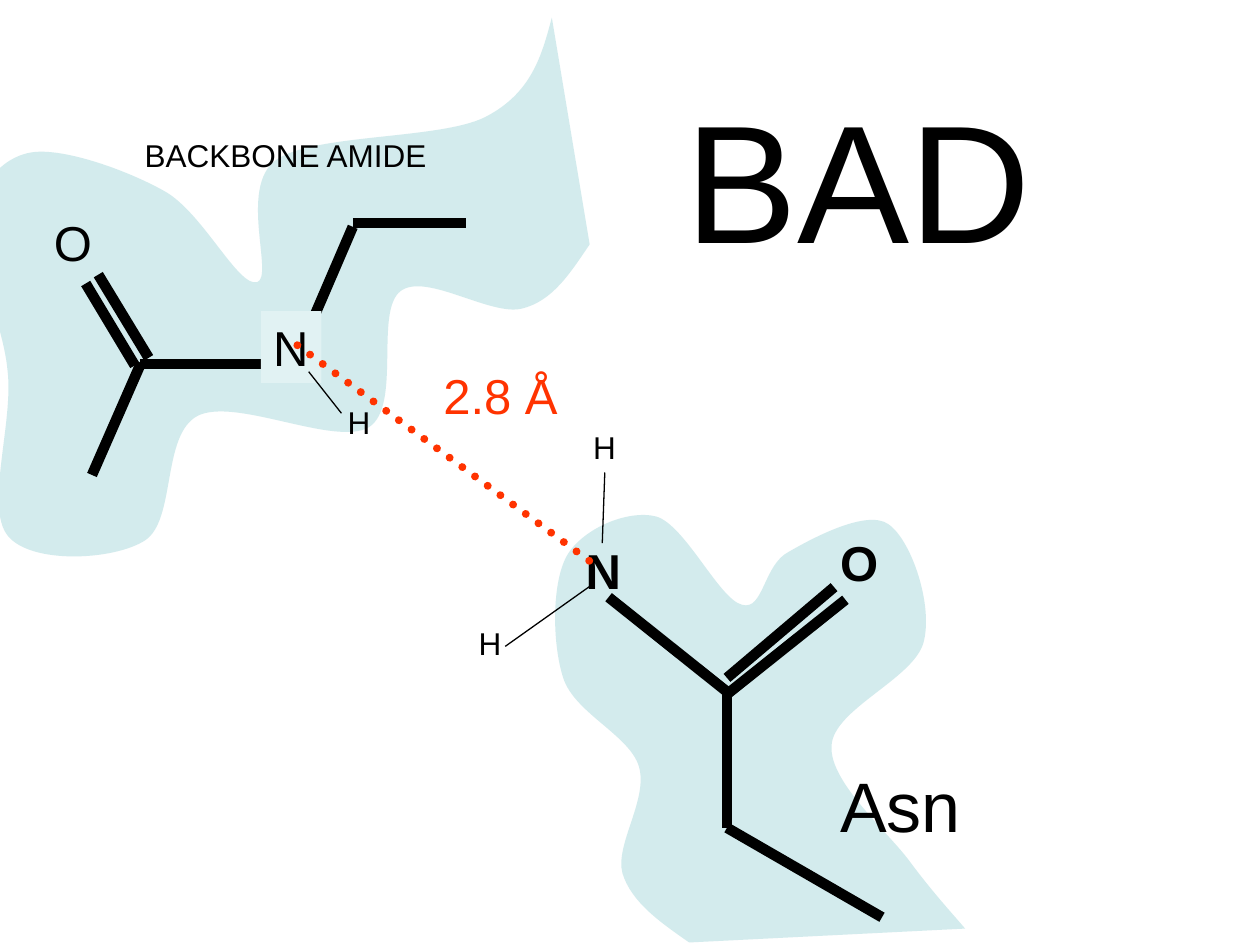
from pptx import Presentation
from pptx.dml.color import RGBColor
from pptx.enum.dml import MSO_LINE
from pptx.enum.shapes import MSO_CONNECTOR, MSO_SHAPE
from pptx.enum.text import MSO_ANCHOR, MSO_AUTO_SIZE, PP_ALIGN
from pptx.oxml.ns import qn
from pptx.util import Cm, Pt
from lxml import etree

STRAIGHT = MSO_CONNECTOR.STRAIGHT
RECTANGLE = MSO_SHAPE.RECTANGLE
ROUND_DOT = MSO_LINE.ROUND_DOT
FIT_SHAPE = MSO_AUTO_SIZE.SHAPE_TO_FIT_TEXT
TOP = MSO_ANCHOR.TOP
LEFT = PP_ALIGN.LEFT
BLACK = RGBColor(0x00, 0x00, 0x00)
RED = RGBColor(0xFF, 0x33, 0x00)
SURFACE = RGBColor(0xC9, 0xE7, 0xE9)
PALE = RGBColor(0xE1, 0xF2, 0xF3)
CM_PER_INCH = 2.54
BOND, THIN, DOTTED = 6, 0.75, 4.5
HYDROGEN_SIZE = (0.38, 0.4)
ATOM_SIZE = (0.48, 0.57)
OXYGEN_SIZE = (0.5, 0.57)

AMIDE_SURFACE = [
    (4.68, 1.94), (4.53, 2.16), (4.39, 2.39), (4.14, 2.45),
    (3.89, 2.51), (3.38, 2.16), (3.18, 2.31), (2.97, 2.47), (3.19, 3.22), (2.93, 3.39),
    (2.66, 3.55), (1.87, 3.15), (1.57, 3.3), (1.28, 3.45), (1.4, 4.13), (1.15, 4.29),
    (0.9, 4.45), (0.24, 4.48), (0.06, 4.25), (-0.12, 4.02), (0.11, 3.35), (0.06, 2.94),
    (0.02, 2.52), (-0.24, 2.06), (-0.21, 1.77), (-0.18, 1.49), (0, 1.25), (0.25, 1.21),
    (0.5, 1.17), (1.01, 1.35), (1.31, 1.52), (1.61, 1.69), (1.89, 2.28), (2.04, 2.24),
    (2.18, 2.2), (1.89, 1.49), (2.19, 1.27), (2.49, 1.06), (3.49, 1.11), (3.85, 0.93),
    (4.22, 0.74), (4.3, 0.44), (4.38, 0.14)]
AMIDE_BONDS = [
    ((1.11, 2.89), (2.34, 2.89)), ((2.34, 2.87), (2.8, 1.8)), ((1.12, 2.88), (0.73, 3.77)),
    ((1.07, 2.9), (0.68, 2.25)), ((1.18, 2.84), (0.78, 2.18)), ((2.8, 1.77), (3.7, 1.77))]
ASN_SURFACE = [
    (1.47, 4.48), (1.24, 4.32), (1.01, 4.16), (0.94, 3.93),
    (0.88, 3.7), (1.15, 3.34), (1.07, 3.08), (0.99, 2.83), (0.56, 2.66), (0.47, 2.38),
    (0.38, 2.1), (0.38, 1.62), (0.5, 1.41), (0.62, 1.2), (0.98, 1.04), (1.21, 1.1),
    (1.44, 1.17), (1.71, 1.76), (1.89, 1.8), (2.06, 1.85), (2.06, 1.48), (2.26, 1.38),
    (2.45, 1.27), (2.88, 1.04), (3.05, 1.16), (3.23, 1.28), (3.41, 1.8), (3.33, 2.1),
    (3.25, 2.39), (2.61, 2.63), (2.6, 2.92), (2.58, 3.21), (3.06, 3.61), (3.23, 3.85),
    (3.41, 4.09), (3.54, 4.23), (3.66, 4.37)]
ASN_BONDS = [
    ((0.83, 1.74), (1.77, 2.49)), ((2.71, 1.76), (1.77, 2.51)), ((1.77, 2.49), (1.77, 3.57)),
    ((2.62, 1.66), (1.77, 2.38)), ((1.77, 3.57), (3, 4.28))]


def spot(origin, point):
    """Turn a point in inches, relative to an origin, into slide lengths."""
    return [Cm((start + offset) * CM_PER_INCH) for start, offset in zip(origin, point)]


def add_surface(page, origin, points):
    """Draw a translucent outline of cubic curves through triples of points."""
    start, *rest = [spot(origin, point) for point in points]
    builder = page.shapes.build_freeform(*start, scale=1.0)
    builder.add_line_segments(rest, close=False)
    shape = builder.convert_to_shape()
    outline = shape._element.find(".//" + qn("a:path"))
    segments = outline.findall(qn("a:lnTo"))
    for first in range(0, len(segments), 3):
        curve = etree.SubElement(outline, qn("a:cubicBezTo"))
        for segment in segments[first:first + 3]:
            curve.append(segment[0])
            outline.remove(segment)
    shape.shadow.inherit = False
    shape.fill.solid()
    shape.fill.fore_color.rgb = SURFACE
    colour = shape._element.spPr.find(".//" + qn("a:srgbClr"))
    etree.SubElement(colour, qn("a:alpha")).set("val", "80000")
    shape.line.fill.background()


def add_bond(page, origin, begin, end, width=BOND, colour=BLACK):
    """Draw one straight line between two points."""
    bond = page.shapes.add_connector(STRAIGHT, *spot(origin, begin), *spot(origin, end))
    bond.line.width = Pt(width)
    bond.line.color.rgb = colour
    etree.SubElement(bond._element.spPr, qn("a:effectLst"))
    return bond


def set_text(box, text, points, colour=BLACK, bold=False):
    """Fill a box with one unwrapped, left-aligned line of text."""
    frame = box.text_frame
    frame.text = text
    frame.word_wrap = False
    frame.auto_size = FIT_SHAPE
    frame.vertical_anchor = TOP
    para = frame.paragraphs[0]
    para.alignment = LEFT
    para.font.name = "Arial"
    para.font.size = Pt(points)
    para.font.bold = bold
    para.font.color.rgb = colour


def add_label(page, origin, point, size, text, points, **style):
    """Add a text box at a point and return it."""
    box = page.shapes.add_textbox(*spot(origin, point), *spot((0, 0), size))
    set_text(box, text, points, **style)
    return box


def add_amide(page, origin):
    """Draw the backbone amide with its surface and labels."""
    add_surface(page, origin, AMIDE_SURFACE)
    for begin, end in AMIDE_BONDS:
        add_bond(page, origin, begin, end)
    add_label(page, origin, (0.33, 1.64), OXYGEN_SIZE, "O", 28)
    nitrogen = page.shapes.add_shape(
        RECTANGLE, *spot(origin, (2.07, 2.47)), *spot((0, 0), ATOM_SIZE))
    nitrogen.shadow.inherit = False
    nitrogen.fill.solid()
    nitrogen.fill.fore_color.rgb = PALE
    nitrogen.line.fill.background()
    set_text(nitrogen, "N", 28)
    add_bond(page, origin, (2.45, 2.95), (2.71, 3.28), THIN)
    add_label(page, origin, (2.66, 3.15), HYDROGEN_SIZE, "H", 18)
    add_label(page, origin, (1.05, 1.03), (2.45, 0.4), "BACKBONE AMIDE", 18)


def add_asparagine(page, origin):
    """Draw the Asn side chain with its surface and labels."""
    add_surface(page, origin, ASN_SURFACE)
    for begin, end in ASN_BONDS:
        add_bond(page, origin, begin, end)
    add_label(page, origin, (0.55, 1.24), ATOM_SIZE, "N", 28, bold=True)
    add_label(page, origin, (2.57, 1.18), OXYGEN_SIZE, "O", 28, bold=True)
    add_label(page, origin, (2.57, 3), (1.16, 0.77), "Asn", 40)
    upper = add_label(page, origin, (0.61, 0.35), HYDROGEN_SIZE, "H", 18)
    add_label(page, origin, (-0.3, 1.9), HYDROGEN_SIZE, "H", 18)
    add_bond(page, origin, (0.7, 1.64), (0.01, 2.13), THIN)
    add_bond(page, origin, (0.78, 1.31), (0.8, 0.75), THIN).end_connect(upper, 2)


def add_distance(page, origin):
    """Draw the dotted distance between the nitrogens and its value."""
    contact = add_bond(page, origin, (0.36, 0.74), (2.77, 2.52), DOTTED, RED)
    contact.line.dash_style = ROUND_DOT
    contact._element.spPr.find(qn("a:ln")).set("cap", "rnd")
    add_label(page, origin, (1.42, 0.85), (1.11, 0.57), "2.8 Å", 28, colour=RED)


def add_title(page, origin):
    """Place the verdict in the title placeholder."""
    title = page.shapes.title
    title.left, title.top = spot(origin, (0, 0))
    title.width, title.height = spot((0, 0), (3.1, 1.7))
    set_text(title, "BAD", 96)


def main():
    """Build the slide and save the deck."""
    deck = Presentation()
    deck.slide_width, deck.slide_height = Cm(25.4), Cm(19.05)
    page = deck.slides.add_slide(deck.slide_layouts[5])
    add_title(page, (5.34, 0.55))
    add_amide(page, (0, 0))
    add_asparagine(page, (4, 3))
    add_distance(page, (2, 2))
    deck.save("out.pptx")


if __name__ == "__main__":
    main()
